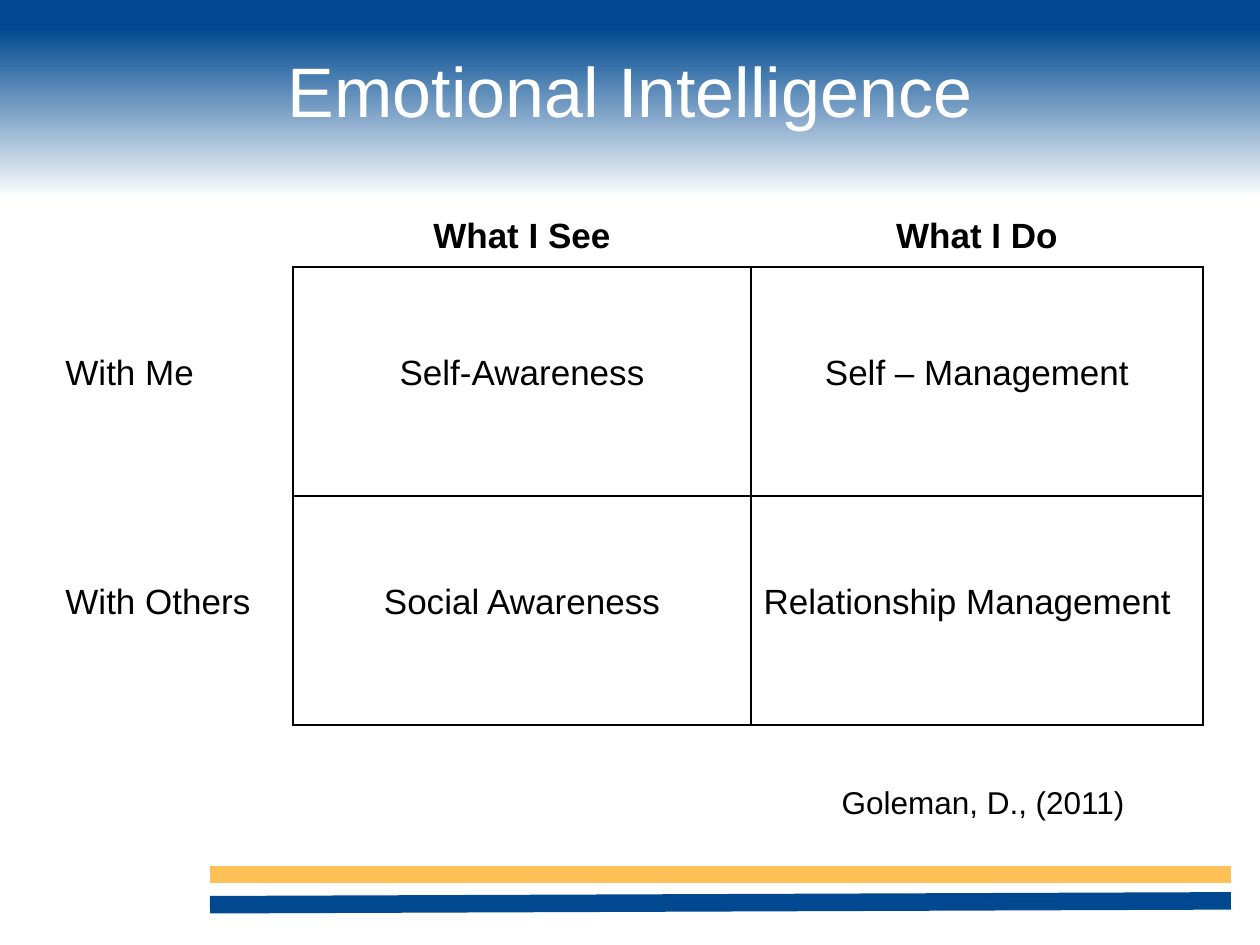
from lxml import etree
from pptx import Presentation
from pptx.dml.color import RGBColor
from pptx.enum.shapes import MSO_CONNECTOR
from pptx.enum.text import MSO_ANCHOR, PP_ALIGN
from pptx.oxml.ns import qn
from pptx.util import Pt

STRAIGHT = MSO_CONNECTOR.STRAIGHT
TOP, MIDDLE = MSO_ANCHOR.TOP, MSO_ANCHOR.MIDDLE
LEFT, CENTER = PP_ALIGN.LEFT, PP_ALIGN.CENTER

FONT = "Arial"
COLORS = {"blue": "004990", "gold": "FEC057", "white": "FFFFFF", "black": "000000"}
COL_WIDTHS = [137.2, 261.8, 258.2]
ROW_HEIGHTS = [32.4, 130.9, 130.9]
MATRIX = [
    ["", "What I See", "What I Do"],
    ["With Me", "Self-Awareness", "Self – Management"],
    ["With Others", "Social Awareness", "Relationship Management"],
]
LEFT_ALIGNED = {"With Me", "With Others", "Relationship Management"}
NO_STYLE = "{2D5ABB26-0587-4C30-8999-92F81FD0307C}"


def rgb(name):
    return RGBColor.from_string(COLORS[name])


def write(tf, text, size, color="black", align=LEFT, bold=False):
    p = tf.paragraphs[0]
    p.alignment = align
    r = p.add_run()
    r.text = text
    r.font.name, r.font.size, r.font.bold = FONT, Pt(size), bold
    r.font.color.rgb = rgb(color)


def add_background(s):
    fill = s.background.fill
    fill.gradient()
    fill.gradient_angle = 270
    stops = s.background._cSld.find(".//" + qn("a:gsLst"))
    for gs in list(stops):
        stops.remove(gs)
    for pos, color in [(0, "blue"), (3, "blue"), (21, "white"), (100, "white")]:
        gs = etree.SubElement(stops, qn("a:gs"), pos=str(pos * 1000))
        etree.SubElement(gs, qn("a:srgbClr"), val=COLORS[color])


def add_text(s, x, y, w, h, text, size, color="black", align=LEFT, anchor=TOP):
    tf = s.shapes.add_textbox(Pt(x), Pt(y), Pt(w), Pt(h)).text_frame
    tf.word_wrap = True
    tf.vertical_anchor = anchor
    write(tf, text, size, color, align)


def add_stripe(s, x, y, w, rise, color):
    line = s.shapes.add_connector(STRAIGHT, Pt(x), Pt(y), Pt(x + w), Pt(y - rise))
    line.line.color.rgb = rgb(color)
    line.line.width = Pt(10)
    etree.SubElement(line._element.spPr, qn("a:effectLst"))


def add_stripes(s, x, y, w):
    add_stripe(s, x, y + 17.3, w, 2.2, "blue")
    add_stripe(s, x, y, w, 0, "gold")


def set_borders(cell, sides):
    tcPr = cell._tc.get_or_add_tcPr()
    for side in "LRTB":
        ln = etree.SubElement(tcPr, qn("a:ln" + side), w=str(Pt(1)))
        if side in sides:
            fill = etree.SubElement(ln, qn("a:solidFill"))
            etree.SubElement(fill, qn("a:srgbClr"), val=COLORS["black"])
        else:
            etree.SubElement(ln, qn("a:noFill"))


def borders_of(row, col):
    """Only the inner 2 x 2 grid is ruled; headings share its outer edge."""
    if row and col:
        return "LRTB"
    if row:
        return "R"
    return "B" if col else ""


def add_matrix(s, x, y):
    frame = s.shapes.add_table(len(ROW_HEIGHTS), len(COL_WIDTHS), Pt(x), Pt(y),
                               Pt(sum(COL_WIDTHS)), Pt(sum(ROW_HEIGHTS)))
    table = frame.table
    table.first_row = table.horz_banding = False
    table._tbl.tblPr.find(qn("a:tableStyleId")).text = NO_STYLE
    for column, width in zip(table.columns, COL_WIDTHS):
        column.width = Pt(width)
    for row, height in zip(table.rows, ROW_HEIGHTS):
        row.height = Pt(height)
    for i, texts in enumerate(MATRIX):
        for j, text in enumerate(texts):
            cell = table.cell(i, j)
            set_borders(cell, borders_of(i, j))
            cell.fill.background()
            if i:
                cell.margin_top = Pt(49.6)
            if text:
                align = LEFT if text in LEFT_ALIGNED else CENTER
                write(cell.text_frame, text, 20, align=align, bold=i == 0)


def main():
    prs = Presentation()
    prs.slide_width, prs.slide_height = Pt(720), Pt(540)
    s = prs.slides.add_slide(prs.slide_layouts[6])
    add_background(s)
    add_stripes(s, 120, 499.7, 583.4)
    add_text(s, 36, 12.2, 648, 77.8, "Emotional Intelligence", 40, "white", CENTER, MIDDLE)
    add_matrix(s, 30.2, 120.2)
    add_text(s, 473.8, 444.2, 221.8, 28.8, "Goleman, D., (2011)", 18)
    prs.save("out.pptx")


if __name__ == "__main__":
    main()
